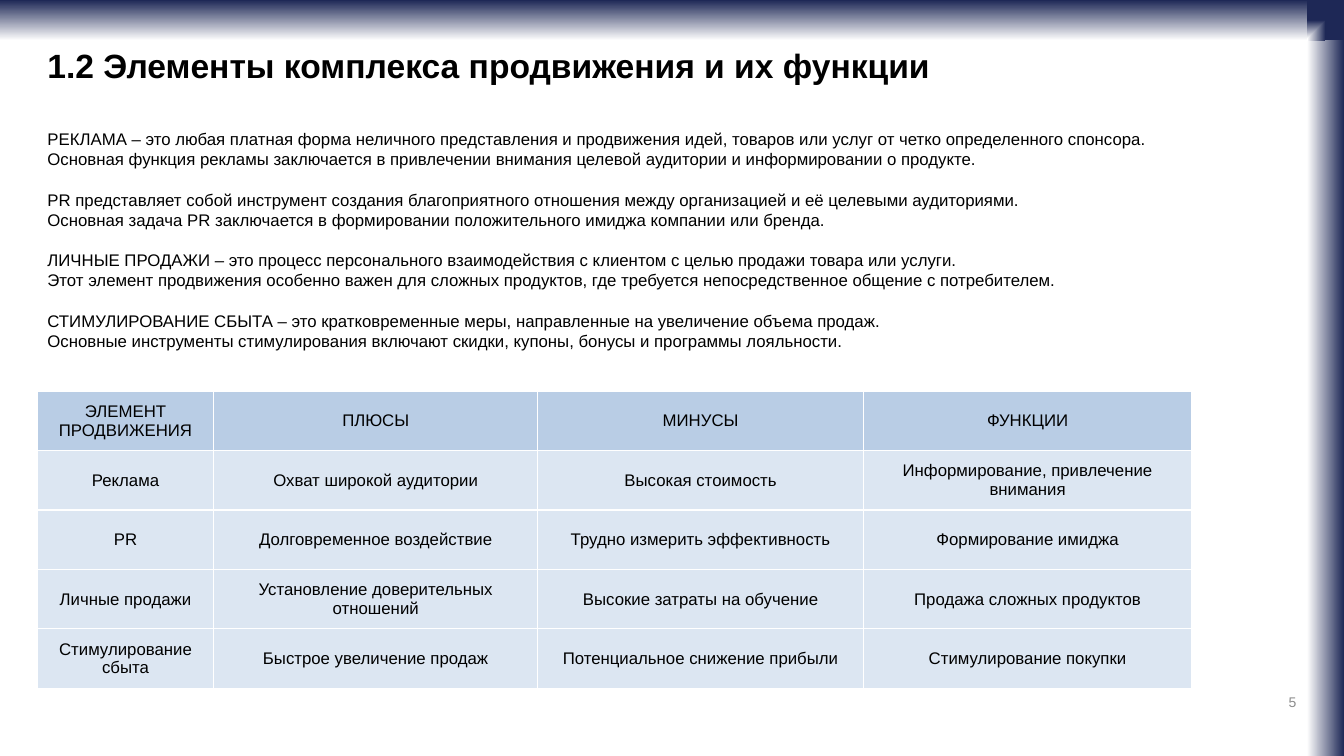
from dataclasses import dataclass

from lxml.etree import SubElement
from pptx import Presentation
from pptx.dml.color import RGBColor
from pptx.enum.shapes import MSO_SHAPE
from pptx.enum.text import MSO_ANCHOR, MSO_AUTO_SIZE, PP_ALIGN
from pptx.oxml.ns import qn
from pptx.util import Inches, Pt

WIDTH, HEIGHT = Inches(13.33), Inches(7.5)
COLUMN, ROW = WIDTH / 100, HEIGHT / 100
LEFT, SIDE, TOP_BAR = 2.78, 97.25, 5.36
BLACK, WHITE, NAVY, GREY = "000000", "FFFFFF", "1E2856", "8C8C8C"
HEADER_FILL, BODY_FILL = "B9CDE5", "DCE6F2"
LINE_PITCH = Pt(14.4)

TITLE = "1.2 Элементы комплекса продвижения и их функции"
DEFINITIONS = [
    ("РЕКЛАМА – это любая платная форма неличного представления и продвижения идей, товаров или услуг от четко определенного спонсора.",
     "Основная функция рекламы заключается в привлечении внимания целевой аудитории и информировании о продукте."),
    ("PR представляет собой инструмент создания благоприятного отношения между организацией и её целевыми аудиториями.",
     "Основная задача PR заключается в формировании положительного имиджа компании или бренда."),
    ("ЛИЧНЫЕ ПРОДАЖИ – это процесс персонального взаимодействия с клиентом с целью продажи товара или услуги.",
     "Этот элемент продвижения особенно важен для сложных продуктов, где требуется непосредственное общение с потребителем."),
    ("СТИМУЛИРОВАНИЕ СБЫТА – это кратковременные меры, направленные на увеличение объема продаж.",
     "Основные инструменты стимулирования включают скидки, купоны, бонусы и программы лояльности."),
]
COMPARISON = [
    ("ЭЛЕМЕНТ ПРОДВИЖЕНИЯ", "ПЛЮСЫ", "МИНУСЫ", "ФУНКЦИИ"),
    ("Реклама", "Охват широкой аудитории", "Высокая стоимость", "Информирование, привлечение внимания"),
    ("PR", "Долговременное воздействие", "Трудно измерить эффективность", "Формирование имиджа"),
    ("Личные продажи", "Установление доверительных отношений", "Высокие затраты на обучение", "Продажа сложных продуктов"),
    ("Стимулирование сбыта", "Быстрое увеличение продаж", "Потенциальное снижение прибыли", "Стимулирование покупки"),
]


@dataclass
class Box:
    column: float
    row: float
    columns: float
    rows: float

    def lengths(self):
        return (round(self.column * COLUMN), round(self.row * ROW),
                round(self.columns * COLUMN), round(self.rows * ROW))


def rgb(value):
    return RGBColor.from_string(value)


def apply(target, values):
    for name, value in values.items():
        setattr(target, name, value)


def place(shape, box):
    apply(shape, dict(zip(("left", "top", "width", "height"), box.lengths())))


def write(paragraph, text, size, color=BLACK, bold=False, **layout):
    apply(paragraph, layout)
    run = paragraph.add_run()
    run.text = text
    apply(run.font, {"name": "Arial", "size": Pt(size), "bold": bold})
    run.font.color.rgb = rgb(color)


def format_frame(frame, anchor):
    apply(frame, {"word_wrap": True, "vertical_anchor": anchor,
                  "auto_size": MSO_AUTO_SIZE.SHAPE_TO_FIT_TEXT})


def add_gradient_bar(slide, box, angle):
    bar = slide.shapes.add_shape(MSO_SHAPE.RECTANGLE, *box.lengths())
    bar.shadow.inherit = False
    bar.line.fill.background()
    bar.fill.gradient()
    bar.fill.gradient_angle = angle
    for stop, color, position in zip(bar.fill.gradient_stops, (WHITE, NAVY), (0, 1)):
        stop.color.rgb = rgb(color)
        stop.position = position
    return bar


def add_frame_bars(slide, box):
    side_width = box.columns - SIDE
    add_gradient_bar(slide, Box(SIDE, box.row, side_width, box.rows), 0)
    add_gradient_bar(slide, Box(box.column, box.row, box.columns, TOP_BAR), 90)
    corner = add_gradient_bar(slide, Box(SIDE, box.row, side_width, TOP_BAR), 0)
    gradient = corner.element.spPr.find(qn("a:gradFill"))
    gradient.remove(gradient.find(qn("a:lin")))
    radial = SubElement(gradient, qn("a:path"), {"path": "rect"})
    SubElement(radial, qn("a:fillToRect"), {"t": "100000", "r": "100000"})


def fill_title(slide, box):
    title = slide.shapes.title
    place(title, box)
    format_frame(title.text_frame, MSO_ANCHOR.MIDDLE)
    write(title.text_frame.paragraphs[0], TITLE, 24, bold=True, alignment=PP_ALIGN.LEFT)


def fill_definitions(slide, box):
    body = slide.placeholders[1]
    place(body, box)
    frame = body.text_frame
    format_frame(frame, MSO_ANCHOR.TOP)
    for group, lines in enumerate(DEFINITIONS):
        for index, line in enumerate(lines):
            starts_group = index == 0
            first = group == 0 and starts_group
            paragraph = frame.paragraphs[0] if first else frame.add_paragraph()
            properties = paragraph._p.get_or_add_pPr()
            properties.set("marL", "0")
            properties.set("indent", "0")
            SubElement(properties, qn("a:buNone"))
            gap = LINE_PITCH if starts_group and not first else Pt(0)
            write(paragraph, line, 12, space_before=gap, space_after=Pt(0),
                  line_spacing=LINE_PITCH)


def add_borders(cell):
    properties = cell._tc.get_or_add_tcPr()
    for edge in ("a:lnL", "a:lnR", "a:lnT", "a:lnB"):
        line = SubElement(properties, qn(edge), {"w": str(Pt(1))})
        fill = SubElement(line, qn("a:solidFill"))
        SubElement(fill, qn("a:srgbClr"), {"val": WHITE})


def add_comparison(slide, box):
    shape = slide.shapes.add_table(len(COMPARISON), len(COMPARISON[0]), *box.lengths())
    table = shape.table
    table.horz_banding = False
    for column, share in zip(table.columns, (0.139, 0.287, 0.287, 0.287)):
        column.width = round(shape.width * share)
    margins = dict.fromkeys(("margin_left", "margin_right", "margin_top", "margin_bottom"),
                            Inches(0.05))
    for row, texts in enumerate(COMPARISON):
        for column, text in enumerate(texts):
            cell = table.cell(row, column)
            apply(cell, {"vertical_anchor": MSO_ANCHOR.MIDDLE, **margins})
            add_borders(cell)
            cell.fill.solid()
            cell.fill.fore_color.rgb = rgb(BODY_FILL if row else HEADER_FILL)
            write(cell.text_frame.paragraphs[0], text, 12, alignment=PP_ALIGN.CENTER)


def add_page_number(slide, box):
    frame = slide.shapes.add_textbox(*box.lengths()).text_frame
    format_frame(frame, MSO_ANCHOR.MIDDLE)
    write(frame.paragraphs[0], "5", 10, GREY, alignment=PP_ALIGN.RIGHT)


def main():
    presentation = Presentation()
    apply(presentation, {"slide_width": WIDTH, "slide_height": HEIGHT})
    slide = presentation.slides.add_slide(presentation.slide_layouts[1])
    add_frame_bars(slide, Box(0, 0, 100, 100))
    fill_title(slide, Box(LEFT, 5.33, 77.2, 6.67))
    fill_definitions(slide, Box(LEFT, 16.4, 84.7, 30.93))
    add_comparison(slide, Box(LEFT, 51.73, SIDE - LEFT, 39.33))
    add_page_number(slide, Box(90.75, 91.07, 6.45, 3.6))
    presentation.save("out.pptx")


if __name__ == "__main__":
    main()
